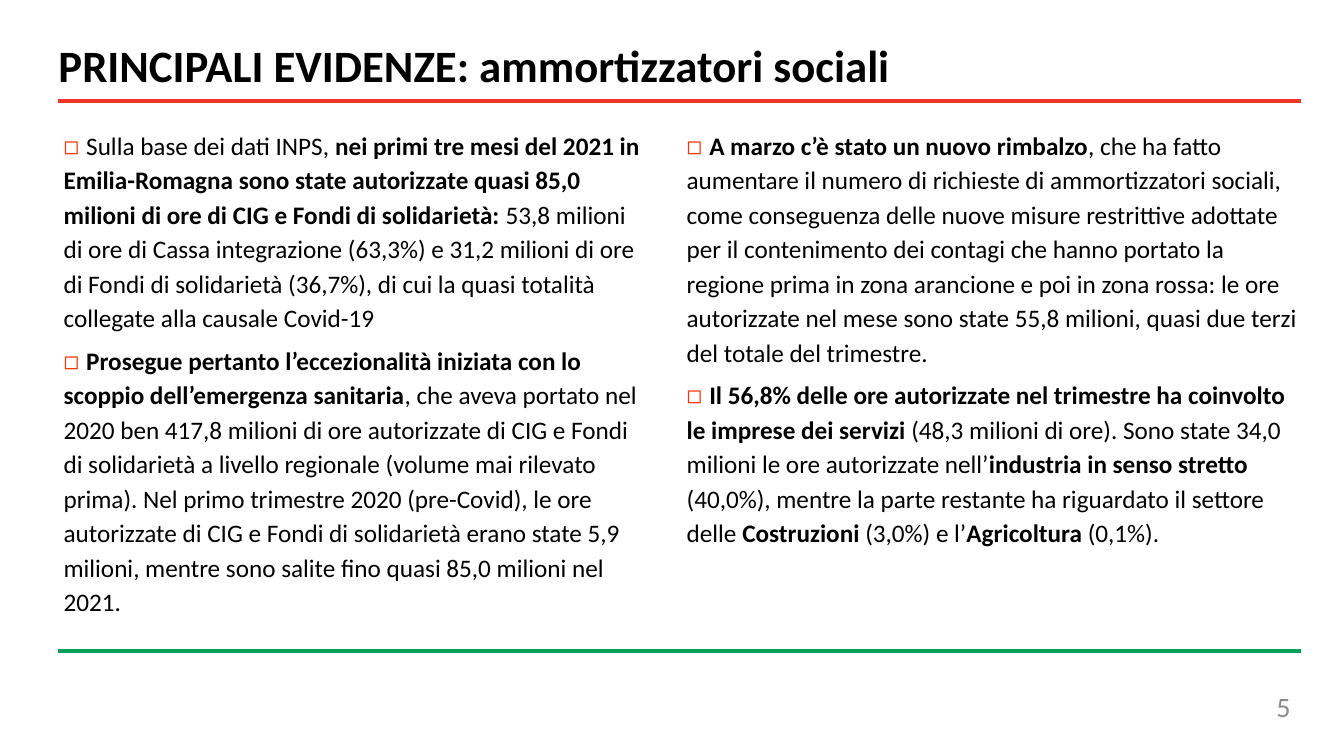
from lxml.etree import SubElement
from pptx import Presentation
from pptx.dml.color import RGBColor
from pptx.enum.shapes import MSO_CONNECTOR
from pptx.enum.text import MSO_ANCHOR, MSO_AUTO_SIZE, PP_ALIGN
from pptx.oxml.ns import qn
from pptx.util import Inches, Pt

W, H = Inches(13.33), Inches(7.5)
BLACK = RGBColor(0x00, 0x00, 0x00)
WHITE = RGBColor(0xFF, 0xFF, 0xFF)
GREY = RGBColor(0x8C, 0x8C, 0x8C)
RED = RGBColor(0xEF, 0x37, 0x2A)
GREEN = RGBColor(0x02, 0x9F, 0x5C)
ORANGE = RGBColor(0xFF, 0x33, 0x00)

# Rules and columns, in percent of the slide's width and height
RULE_LEFT, RULE_RIGHT = 4.28, 96.77
LEFT_BOX = (3.98, 15.47, 45.09, 66.93)
RIGHT_BOX = (50.34, 15.47, 47.34, 57.73)

# Each paragraph is a list of (text, bold) pieces
LEFT_TEXT = [
    [("Sulla base dei dati INPS, ", False),
     ("nei primi tre mesi del 2021 in Emilia-Romagna sono state autorizzate "
      "quasi 85,0 milioni di ore di CIG e Fondi di solidarietà: ", True),
     ("53,8 milioni di ore di Cassa integrazione (63,3%) e 31,2 milioni di ore "
      "di Fondi di solidarietà (36,7%), di cui la quasi totalità collegate "
      "alla causale Covid-19", False)],
    [("Prosegue pertanto l’eccezionalità iniziata con lo scoppio "
      "dell’emergenza sanitaria", True),
     (", che aveva portato nel 2020 ben 417,8 milioni di ore autorizzate di CIG "
      "e Fondi di solidarietà a livello regionale (volume mai rilevato prima). "
      "Nel primo trimestre 2020 (pre-Covid), le ore autorizzate di CIG e Fondi "
      "di solidarietà erano state 5,9 milioni, mentre sono salite fino quasi "
      "85,0 milioni nel 2021.", False)],
]
RIGHT_TEXT = [
    [("A marzo c’è stato un nuovo rimbalzo", True),
     (", che ha fatto aumentare il numero di richieste di ammortizzatori "
      "sociali, come conseguenza delle nuove misure restrittive adottate per il "
      "contenimento dei contagi che hanno portato la regione prima in zona "
      "arancione e poi in zona rossa: le ore autorizzate nel mese sono state "
      "55,8 milioni, quasi due terzi del totale del trimestre.", False)],
    [("Il 56,8% delle ore autorizzate nel trimestre ha coinvolto le imprese "
      "dei servizi ", True),
     ("(48,3 milioni di ore). Sono state 34,0 milioni le ore autorizzate "
      "nell’", False),
     ("industria in senso stretto", True),
     (" (40,0%), mentre la parte restante ha riguardato il settore delle ", False),
     ("Costruzioni ", True),
     ("(3,0%) e l’", False),
     ("Agricoltura", True),
     (" (0,1%).", False)],
]


def across(share):
    return round(W * share / 100)


def down(share):
    return round(H * share / 100)


def set_all(obj, values):
    for name, value in values.items():
        setattr(obj, name, value)


def place(sp, x, y, w, h):
    set_all(sp, {"left": across(x), "top": down(y),
                 "width": across(w), "height": down(h)})


def add_run(p, text, size, color=BLACK, bold=False, font="Calibri"):
    r = p.add_run()
    r.text = text
    set_all(r.font, {"name": font, "size": Pt(size), "bold": bold})
    r.font.color.rgb = color


def add_rule(s, y, color):
    line = s.shapes.add_connector(MSO_CONNECTOR.STRAIGHT, across(RULE_LEFT),
                                  down(y), across(RULE_RIGHT), down(y))
    line.line.color.rgb = color
    line.line.width = Pt(2.5)
    SubElement(line._element.spPr, qn("a:effectLst"))


def fill_line(sp, box, text, size, color, bold, align, wrap):
    place(sp, *box)
    tf = sp.text_frame
    set_all(tf, {"word_wrap": wrap, "auto_size": MSO_AUTO_SIZE.NONE,
                 "vertical_anchor": MSO_ANCHOR.MIDDLE})
    p = tf.paragraphs[0]
    p.alignment = align
    add_run(p, text, size, color, bold)


def fill_column(sp, box, paragraphs):
    place(sp, *box)
    tf = sp.text_frame
    set_all(tf, {"word_wrap": True, "auto_size": MSO_AUTO_SIZE.NONE,
                 "vertical_anchor": MSO_ANCHOR.TOP, "margin_top": Inches(0.09)})
    for i, pieces in enumerate(paragraphs):
        p = tf.paragraphs[0] if i == 0 else tf.add_paragraph()
        set_all(p, {"line_spacing": 1.14, "space_before": Pt(3 if i else 0),
                    "space_after": Pt(3), "alignment": PP_ALIGN.LEFT})
        # The square is part of the text, so wrapped lines start under it
        pPr = p._p.get_or_add_pPr()
        pPr.set("marL", "0")
        pPr.set("indent", "0")
        SubElement(pPr, qn("a:buNone"))
        add_run(p, "◻ ", 18, ORANGE, font="Arial")
        for text, bold in pieces:
            add_run(p, text, 18, bold=bold)


def main():
    prs = Presentation()
    set_all(prs, {"slide_width": W, "slide_height": H})
    s = prs.slides.add_slide(prs.slide_layouts[3])
    title, left, right = s.placeholders

    # Heading
    fill_line(title, (3.6, 4.27, 63.99, 8.53),
              "PRINCIPALI EVIDENZE: ammortizzatori sociali",
              32, BLACK, True, PP_ALIGN.LEFT, False)
    add_rule(s, 13.33, RED)

    # Two columns of findings
    fill_column(left, LEFT_BOX, LEFT_TEXT)
    fill_column(right, RIGHT_BOX, RIGHT_TEXT)
    right.fill.solid()
    right.fill.fore_color.rgb = WHITE

    # Footer with page number
    add_rule(s, 86.13, GREEN)
    number = s.shapes.add_textbox(0, 0, 0, 0)
    fill_line(number, (73.44, 90.8, 23.33, 5.33), "5",
              20, GREY, False, PP_ALIGN.RIGHT, True)

    prs.save("out.pptx")


if __name__ == "__main__":
    main()
